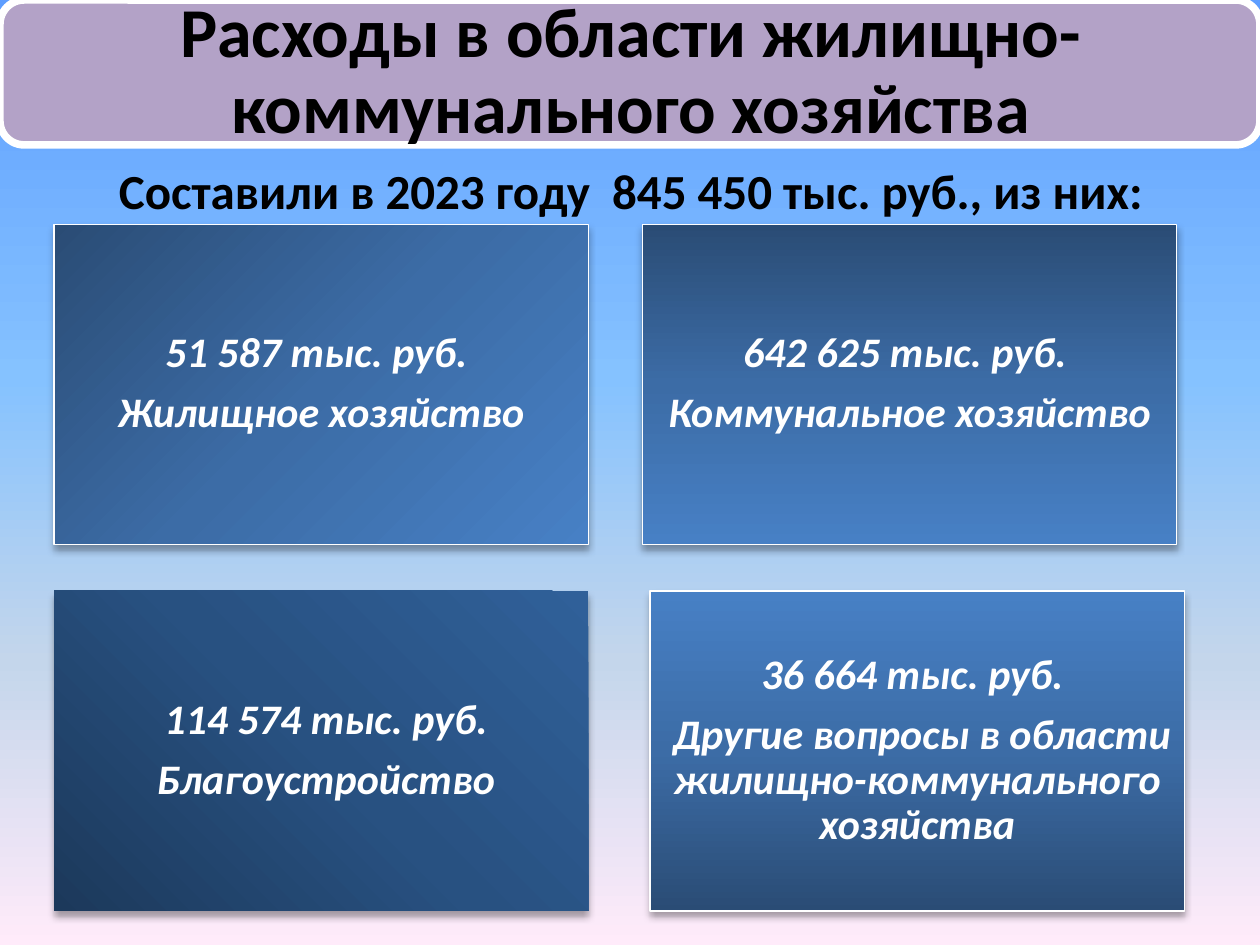
from lxml import etree
from pptx import Presentation
from pptx import util as u
from pptx.dml.color import RGBColor
from pptx.enum import shapes, text
from pptx.oxml.ns import qn

COLOURS = {"banner": "B3A2C7", "white": "FFFFFF", "black": "000000"}
SKY = [(0, "5E9EFF"), (40, "85C2FF"), (70, "C4D6EB"), (100, "FFEBFA")]
BLUE = [(0, "2A4C75"), (50, "3C6CA6"), (100, "4780C5")]
NAVY = [(0, "1C395B"), (50, "285181"), (100, "306099")]

CARD_SIZE = (4.24, 2.54)
TOP_ROW, BOTTOM_ROW = 1.78, 4.69
LEFT_COLUMN = 0.43
# left, top, gradient stops, angle (None: radial from bottom left), inset, lines
CARDS = [
    (LEFT_COLUMN, TOP_ROW, BLUE, 45, 0.1,
     ["51 587 тыс. руб. ", "Жилищное хозяйство"]),
    (5.1, TOP_ROW, BLUE, 90, 0.1,
     ["642 625 тыс. руб. ", "Коммунальное хозяйство"]),
    (5.16, BOTTOM_ROW, BLUE, 270, 0.1,
     ["36 664 тыс. руб. ",
      " Другие вопросы в области жилищно-коммунального хозяйства"]),
    (LEFT_COLUMN, BOTTOM_ROW, NAVY, None, 0.12,
     [" 114 574 тыс. руб.", " Благоустройство"]),
]


def add_node(parent, tag, **values):
    return etree.SubElement(parent, qn(tag), {k: str(v) for k, v in values.items()})


def set_gradient(owner, fill, stops, angle):
    """Fill with the stops, along a clockwise angle or out of the bottom left corner."""
    fill.gradient()
    gradient = owner._element.find(".//" + qn("a:gradFill"))
    for child in list(gradient):
        gradient.remove(child)
    stop_list = add_node(gradient, "a:gsLst")
    for position, colour in stops:
        stop = add_node(stop_list, "a:gs", pos=position * 1000)
        add_node(stop, "a:srgbClr", val=colour)
    if angle is None:
        radial = add_node(gradient, "a:path", path="circle")
        add_node(radial, "a:fillToRect", t=100000, r=100000)
    else:
        add_node(gradient, "a:lin", ang=angle * 60000, scaled=0)


def add_shadow(shape):
    effects = shape._element.spPr.find(qn("a:effectLst"))
    shadow = add_node(effects, "a:outerShdw", blurRad=u.Pt(4), dist=u.Pt(3),
                      dir=90 * 60000, rotWithShape=0)
    colour = add_node(shadow, "a:srgbClr", val=COLOURS["black"])
    add_node(colour, "a:alpha", val=35000)


def write_text(box, lines, size, colour, inset, italic=False, para_format=None):
    frame = box.text_frame
    frame_format = {"word_wrap": True, "auto_size": text.MSO_AUTO_SIZE.NONE,
                    "vertical_anchor": text.MSO_ANCHOR.MIDDLE}
    for side in ("left", "right", "top", "bottom"):
        frame_format["margin_" + side] = u.Inches(inset)
    for name, value in frame_format.items():
        setattr(frame, name, value)
    font_format = {"name": "Calibri", "size": u.Pt(size), "bold": True, "italic": italic}
    for index, line in enumerate(lines):
        para = frame.paragraphs[0] if index == 0 else frame.add_paragraph()
        para.alignment = text.PP_ALIGN.CENTER
        for name, value in (para_format or {}).items():
            setattr(para, name, value)
        span = para.add_run()
        span.text = line
        for name, value in font_format.items():
            setattr(span.font, name, value)
        span.font.color.rgb = RGBColor.from_string(COLOURS[colour])


def place(box, left, top, width, height):
    for name, value in zip(("left", "top", "width", "height"), (left, top, width, height)):
        setattr(box, name, u.Inches(value))


def add_plain_shape(page, kind, left, top, width, height, line_width):
    shape = page.shapes.add_shape(kind, *map(u.Inches, (left, top, width, height)))
    shape.shadow.inherit = False
    if line_width:
        shape.line.color.rgb = RGBColor.from_string(COLOURS["white"])
        shape.line.width = u.Pt(line_width)
    else:
        shape.line.fill.background()
    return shape


def add_banner(page):
    banner = add_plain_shape(page, shapes.MSO_SHAPE.ROUNDED_RECTANGLE, 0, 0, 10, 1.15, 4.33)
    banner.fill.solid()
    banner.fill.fore_color.rgb = RGBColor.from_string(COLOURS["banner"])
    # The title lies over the banner
    title = page.shapes.title
    banner._element.addnext(title._element)
    place(title, 0.06, 0.06, 9.89, 1.04)
    write_text(title, ["Расходы в области жилищно-коммунального хозяйства"], 40, "black",
               0.17, para_format={"line_spacing": 0.9, "space_before": u.Pt(0)})


def add_card(page, left, top, stops, angle, inset, lines):
    line_width = 0 if angle is None else 0.75
    card = add_plain_shape(page, shapes.MSO_SHAPE.RECTANGLE, left, top, *CARD_SIZE, line_width)
    set_gradient(card, card.fill, stops, angle)
    add_shadow(card)
    write_text(card, lines, 24, "white", inset, italic=True,
               para_format={"line_spacing": 0.9, "space_after": u.Pt(8.4)})


def add_total(page):
    total = page.shapes.add_textbox(*map(u.Inches, (0.24, 1.15, 9.53, 0.71)))
    write_text(total, ["Составили в 2023 году  845 450 тыс. руб., из них:"], 28, "black", 0.05)


def main():
    deck = Presentation()
    deck.slide_width, deck.slide_height = u.Inches(10), u.Inches(7.5)
    page = deck.slides.add_slide(deck.slide_layouts[5])
    set_gradient(page, page.background.fill, SKY, 90)
    add_banner(page)
    for card in CARDS:
        add_card(page, *card)
    add_total(page)
    deck.save("out.pptx")


if __name__ == "__main__":
    main()
